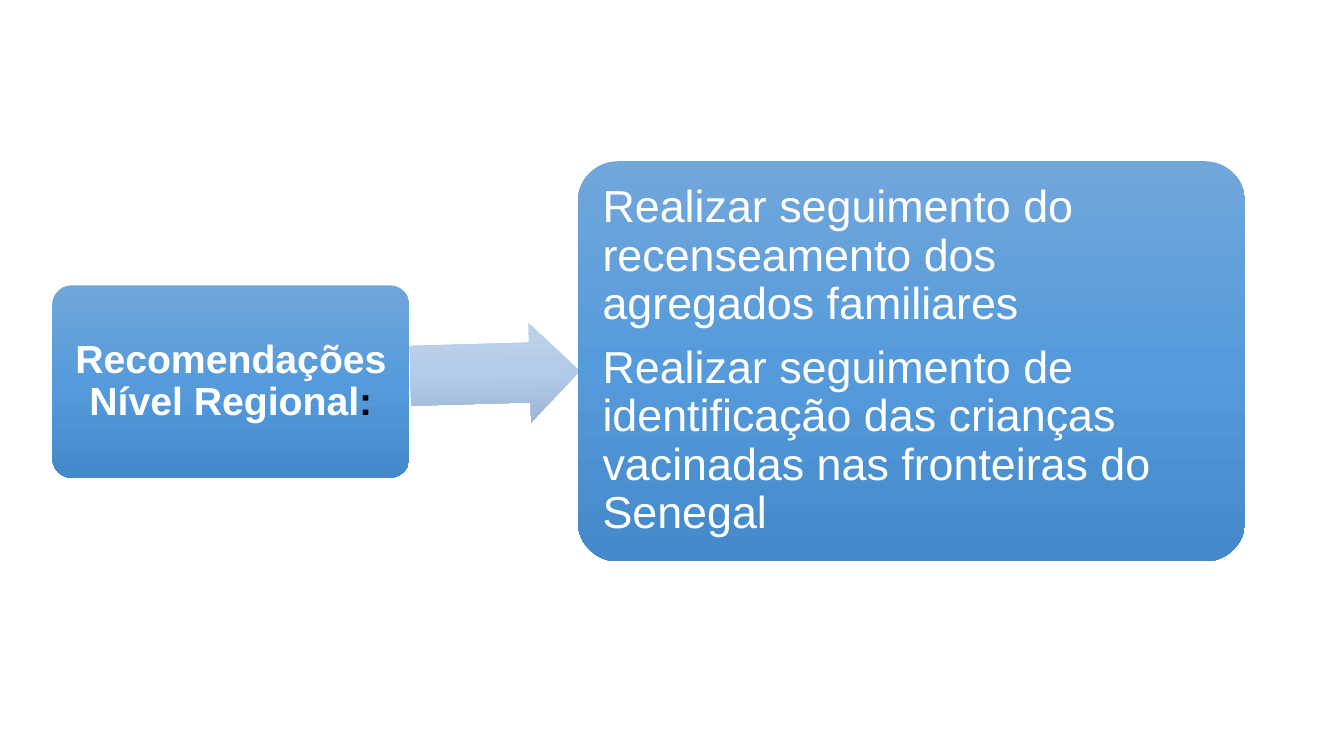
from copy import deepcopy

from pptx import Presentation
from pptx.dml.color import RGBColor
from pptx.enum.shapes import MSO_SHAPE
from pptx.enum.text import MSO_ANCHOR, PP_ALIGN
from pptx.util import Inches, Pt

ROUNDED, ARROW = MSO_SHAPE.ROUNDED_RECTANGLE, MSO_SHAPE.RIGHT_ARROW
MIDDLE = MSO_ANCHOR.MIDDLE
LEFT, CENTER = PP_ALIGN.LEFT, PP_ALIGN.CENTER

WHITE = RGBColor(0xFF, 0xFF, 0xFF)
BLACK = RGBColor(0x00, 0x00, 0x00)
BLUES = [RGBColor(0x71, 0xA6, 0xDB), RGBColor(0x55, 0x9B, 0xDB), RGBColor(0x44, 0x8A, 0xCA)]
PALE_BLUES = [RGBColor(0xC0, 0xD2, 0xEB), RGBColor(0xB3, 0xCB, 0xE9), RGBColor(0x9B, 0xB4, 0xD3)]


def add_gradient_shape(kind, box, colors):
    """Add a borderless shape with a three-stop gradient from top to bottom."""
    s = slide.shapes.add_shape(kind, *[Inches(v) for v in box])
    s.shadow.inherit = False
    s.line.fill.background()
    s.fill.gradient()
    s.fill.gradient_angle = 270
    first = s._element.spPr.xpath("./a:gradFill/a:gsLst/a:gs")[0]
    first.addnext(deepcopy(first))
    for stop, position, color in zip(s.fill.gradient_stops, (0, 0.5, 1), colors):
        stop.position = position
        stop.color.rgb = color
    return s


def add_text_box(box, paragraphs, size, inset, align, bold):
    """Add a rounded blue box; each paragraph is a list of (text, color) runs."""
    s = add_gradient_shape(ROUNDED, box, BLUES)
    s.adjustments[0] = 0.1
    tf = s.text_frame
    tf.word_wrap = True
    tf.vertical_anchor = MIDDLE
    tf.margin_left = tf.margin_right = tf.margin_top = tf.margin_bottom = Inches(inset)
    for i, runs in enumerate(paragraphs):
        p = tf.add_paragraph() if i else tf.paragraphs[0]
        p.alignment = align
        p.line_spacing = 0.9
        p.space_after = Pt(round(size * 0.35))
        for text, color in runs:
            r = p.add_run()
            r.text = text
            r.font.name = "Arial"
            r.font.size = Pt(size)
            r.font.bold = bold
            r.font.color.rgb = color


prs = Presentation()
prs.slide_width, prs.slide_height = Inches(13.33), Inches(7.5)
slide = prs.slides.add_slide(prs.slide_layouts[6])

heading = [[("Recomendações Nível Regional", WHITE), (":", BLACK)]]
add_text_box((0.52, 2.83, 3.54, 1.91), heading, 28, 0.12, CENTER, True)

arrow = add_gradient_shape(ARROW, (4.07, 3.21, 1.68, 0.99), PALE_BLUES)
arrow.adjustments[0] = 0.6
arrow.adjustments[1] = 0.5
arrow.rotation = 358.4

recommendations = [
    [("Realizar seguimento do recenseamento dos agregados familiares", WHITE)],
    [("Realizar seguimento de identificação das crianças vacinadas nas fronteiras do Senegal", WHITE)],
]
add_text_box((5.73, 1.6, 6.62, 3.97), recommendations, 32, 0.13, LEFT, False)

prs.save("out.pptx")
